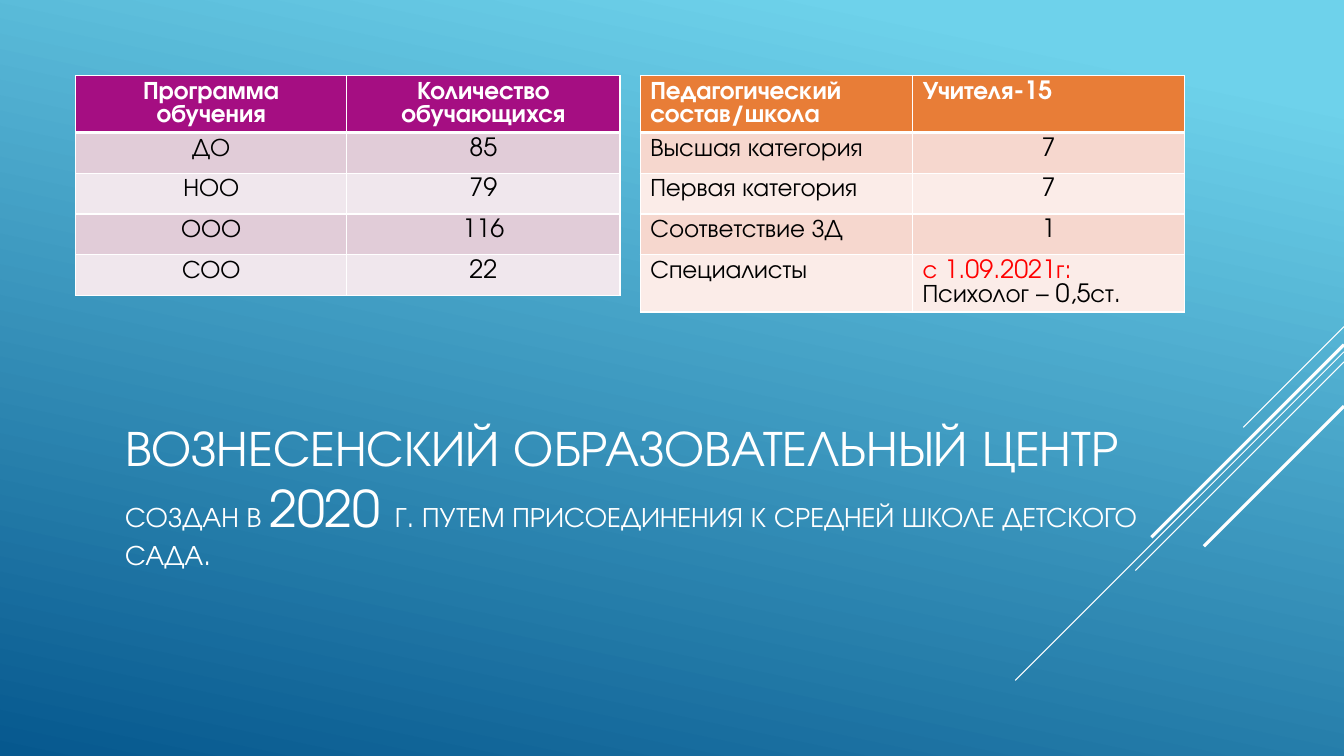
from lxml import etree
from pptx import Presentation, util as u
from pptx.dml.color import RGBColor
from pptx.enum import shapes, text
from pptx.oxml import ns

FONT = "TeX Gyre Adventor"
WHITE = RGBColor(0xFF, 0xFF, 0xFF)
BLACK = RGBColor(0, 0, 0)
RED = RGBColor(0xFF, 0, 0)
SKY = RGBColor(0x6E, 0xD2, 0xEB)
NAVY = RGBColor(0x06, 0x58, 0x8E)
PURPLE = RGBColor(0xA5, 0x0E, 0x82)
PURPLE_BANDS = RGBColor(0xE1, 0xCC, 0xD8), RGBColor(0xF0, 0xE7, 0xED)
ORANGE = RGBColor(0xE8, 0x7D, 0x37)
ORANGE_BANDS = RGBColor(0xF6, 0xD7, 0xCE), RGBColor(0xFB, 0xEC, 0xE8)
CENTER, LEFT = text.PP_ALIGN.CENTER, text.PP_ALIGN.LEFT

DIAGONALS = [(3.24, 1, 0.75), (3.49, 3.26, 0.75), (3.59, 2.07, 0.75),
             (3.42, 1.91, 2.25), (4.03, 1.39, 2.25)]
TITLE_RUNS = [("ВОЗНЕСЕНСКИЙ ОБРАЗОВАТЕЛЬНЫЙ ЦЕНТР ", 36), ("СОЗДАН В ", 20), ("2020 ", 36),
              ("Г. ПУТЕМ ПРИСОЕДИНЕНИЯ К СРЕДНЕЙ ШКОЛЕ ДЕТСКОГО САДА.", 20)]
STUDENTS = [("Программа обучения", "Количество обучающихся"),
            ("ДО", "85"), ("НОО", "79"), ("ООО", "116"), ("СОО", "22")]
TEACHERS = [("Педагогический состав/школа", "Учителя-15"),
            ("Высшая категория", "7"), ("Первая категория", "7"), ("Соответствие ЗД", "1"),
            ("Специалисты", "с 1.09.2021г:\nПсихолог – 0,5ст.")]


class SlideBuilder:
    """Holds the style and the current slide."""

    def __init__(self, presentation):
        self.slide = presentation.slides.add_slide(presentation.slide_layouts[5])

    def background(self, start, end, angle):
        fill = self.slide.background.fill
        fill.gradient()
        fill.gradient_angle = angle
        for stop, color, position in zip(fill.gradient_stops, (start, end), (0.1, 1)):
            stop.color.rgb = color
            stop.position = position

    def diagonal(self, top, run, width):
        right = 13.33
        line = self.slide.shapes.add_connector(
            shapes.MSO_CONNECTOR.STRAIGHT, u.Inches(right), u.Inches(top),
            u.Inches(right - run), u.Inches(top + run))
        line.line.color.rgb = WHITE
        line.line.width = u.Pt(width)
        etree.SubElement(line._element.spPr, ns.qn("a:effectLst"))

    def title(self, left, top, width, height, runs):
        shape = self.slide.shapes.title
        shape.left, shape.top = u.Inches(left), u.Inches(top)
        shape.width, shape.height = u.Inches(width), u.Inches(height)
        frame = shape.text_frame
        frame.word_wrap = True
        frame.auto_size = text.MSO_AUTO_SIZE.NONE
        frame.vertical_anchor = text.MSO_ANCHOR.MIDDLE
        frame.margin_bottom = u.Inches(0.63)
        paragraph = frame.paragraphs[0]
        paragraph.alignment = LEFT
        paragraph.line_spacing = 1.0
        for words, size in runs:
            run = paragraph.add_run()
            run.text = words
            run.font.size = u.Pt(size)
            run.font.name = FONT
            run.font.color.rgb = WHITE

    def borders(self, cell, bottom):
        properties = cell._tc.get_or_add_tcPr()
        for index, (side, width) in enumerate(zip("LRTB", (1, 1, 1, bottom))):
            line = etree.Element(ns.qn(f"a:ln{side}"), w=str(u.Pt(width)))
            fill = etree.SubElement(line, ns.qn("a:solidFill"))
            etree.SubElement(fill, ns.qn("a:srgbClr"), val=str(WHITE))
            properties.insert(index, line)

    def table(self, left, columns, heights, rows, header, bands, alignment):
        table = self.slide.shapes.add_table(
            len(rows), len(columns), u.Inches(left), u.Inches(0.75),
            u.Inches(sum(columns)), u.Inches(sum(heights))).table
        for column, width in zip(table.columns, columns):
            column.width = u.Inches(width)
        for index, values in enumerate(rows):
            table.rows[index].height = u.Inches(heights[index])
            for column, value in enumerate(values):
                cell = table.cell(index, column)
                cell.text = value
                cell.fill.solid()
                cell.fill.fore_color.rgb = bands[(index - 1) % 2] if index else header
                self.borders(cell, 1 if index else 3)
                for paragraph in cell.text_frame.paragraphs:
                    paragraph.alignment = CENTER if value.isdigit() else alignment
                    paragraph.line_spacing = 1.0
                    font = paragraph.font
                    font.name, font.size, font.bold = FONT, u.Pt(18), index == 0
                    font.color.rgb = BLACK if index else WHITE
        return table


def main():
    presentation = Presentation()
    presentation.slide_width, presentation.slide_height = u.Inches(13.33), u.Inches(7.5)
    builder = SlideBuilder(presentation)
    builder.background(SKY, NAVY, 258)
    for diagonal in DIAGONALS:
        builder.diagonal(*diagonal)
    builder.title(1.14, 3.84, 10.43, 2.69, TITLE_RUNS)
    row, tall = 0.405, 0.56
    builder.table(0.75, (2.69, 2.71), [tall] + [row] * 4, STUDENTS,
                  PURPLE, PURPLE_BANDS, CENTER)
    teachers = builder.table(6.35, (2.7, 2.7), [tall] + [row] * 3 + [tall], TEACHERS,
                             ORANGE, ORANGE_BANDS, LEFT)
    teachers.cell(4, 1).text_frame.paragraphs[0].font.color.rgb = RED
    presentation.save("out.pptx")


if __name__ == "__main__":
    main()
